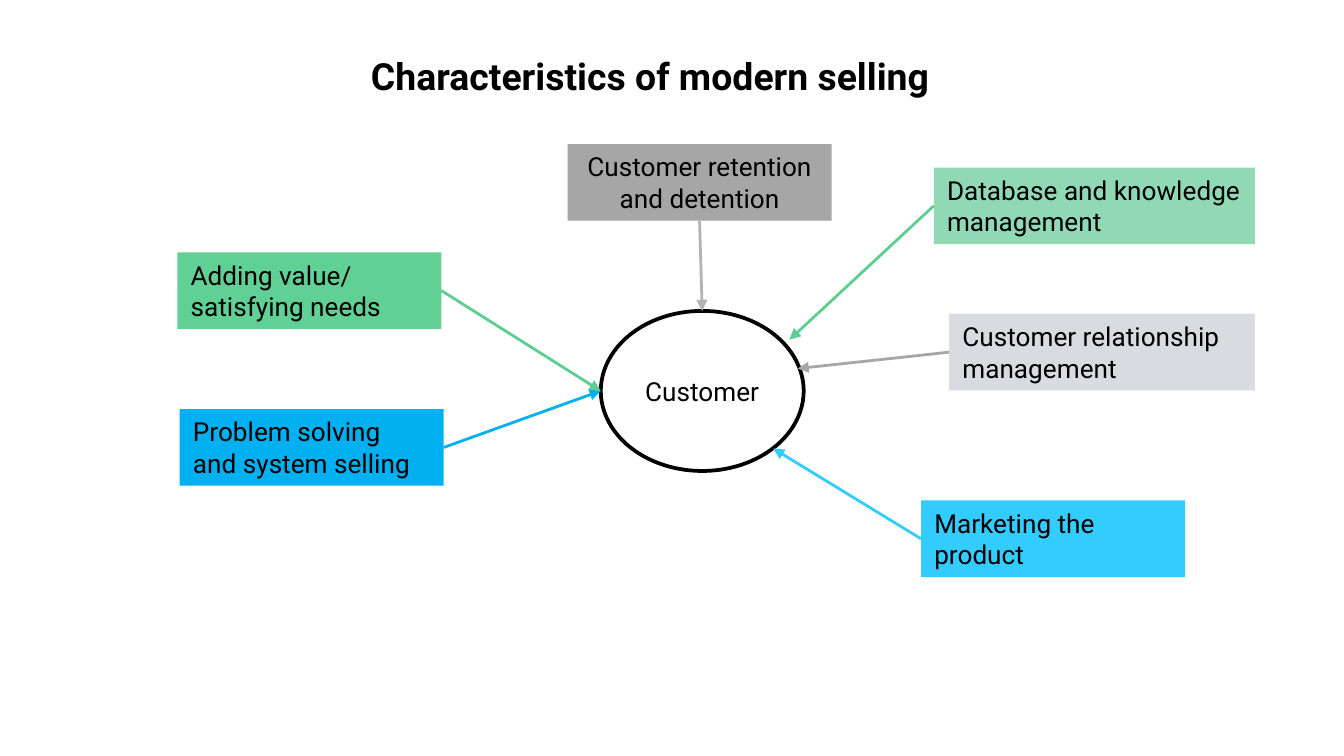
import pptx
import pptx.util
import pptx.dml.color
import pptx.enum.shapes
import pptx.enum.text
import pptx.oxml.ns
from lxml import etree

SHAPES = pptx.enum.shapes.MSO_SHAPE
ALIGN = pptx.enum.text.PP_ALIGN
ANCHOR = pptx.enum.text.MSO_ANCHOR
FONT = "Roboto"

WIDTH = pptx.util.Inches(10)
HEIGHT = WIDTH * 9 // 16
TITLE = ("Characteristics of modern selling", (26.6, 6.15, 46.9, 7.83))
HUB = ("Customer", (44.7, 41.13, 15.1, 21.17))
BOX_HEIGHT = 10.14

TRAITS = [
    dict(text="Customer retention and detention", left=42.23, top=19.06, width=19.65,
         fill="A6A6A6", arrow="B3B3B3", side="bottom", tip=(0.5, 0), align=ALIGN.CENTER),
    dict(text="Database and knowledge management", left=69.48, top=22.16, width=23.9,
         fill="91D9B5", arrow="5CCE92", side="left", tip=(0.93, 0.18)),
    dict(text="Marketing the product", left=68.53, top=66.2, width=19.65,
         fill="33CCFF", arrow="33CCFF", side="left", tip=(0.85, 0.86)),
    dict(text="Customer relationship management", left=70.62, top=41.52, width=22.75,
         fill="DADBE1", arrow="A6A6A6", side="left", tip=(0.97, 0.36)),
    dict(text="Adding value/ satisfying needs", left=13.2, top=33.38, width=19.65,
         fill="61D095", arrow="5CCE92", side="right", tip=(0, 0.5)),
    dict(text="Problem solving and system selling", left=13.37, top=54.12, width=19.65,
         fill="00B0F0", arrow="00B0F0", side="right", tip=(0, 0.5)),
]
SIDES = {"left": (0, 0.5), "right": (1, 0.5), "bottom": (0.5, 1)}


def colour(value):
    return pptx.dml.color.RGBColor.from_string(value)


def place(left, top, width, height):
    return [int(share * size / 100) for share, size in
            zip((left, top, width, height), (WIDTH, HEIGHT, WIDTH, HEIGHT))]


def point_on(shape, across, down):
    return int(shape.left + across * shape.width), int(shape.top + down * shape.height)


def write(shape, text, size=14, bold=False, align=ALIGN.LEFT, anchor=ANCHOR.TOP):
    frame = shape.text_frame
    frame.word_wrap = True
    frame.auto_size = pptx.enum.text.MSO_AUTO_SIZE.NONE
    frame.vertical_anchor = anchor
    para = frame.paragraphs[0]
    para.alignment = align
    span = para.add_run()
    span.text = text
    span.font.name = FONT
    span.font.size = pptx.util.Pt(size)
    span.font.bold = bold
    span.font.color.rgb = colour("000000")


def add_box(page, kind, area, fill, outline=None):
    box = page.shapes.add_shape(kind, *place(*area))
    box.shadow.inherit = False
    box.fill.solid()
    box.fill.fore_color.rgb = colour(fill)
    if outline:
        box.line.color.rgb = colour(outline)
        box.line.width = pptx.util.Pt(2)
    else:
        box.line.fill.background()
    return box


def add_arrow(page, start, end, line_colour):
    arrow = page.shapes.add_connector(
        pptx.enum.shapes.MSO_CONNECTOR.STRAIGHT, *start, *end)
    arrow.line.color.rgb = colour(line_colour)
    arrow.line.width = pptx.util.Pt(1.5)
    name = pptx.oxml.ns.qn
    properties = arrow._element.spPr
    etree.SubElement(properties.find(name("a:ln")), name("a:tailEnd"), type="triangle")
    etree.SubElement(properties, name("a:effectLst"))


def main():
    deck = pptx.Presentation()
    deck.slide_width, deck.slide_height = WIDTH, HEIGHT
    page = deck.slides.add_slide(deck.slide_layouts[5])

    title_text, title_area = TITLE
    title = page.shapes.title
    title.left, title.top, title.width, title.height = place(*title_area)
    write(title, title_text, size=20, bold=True)

    hub_text, hub_area = HUB
    hub = add_box(page, SHAPES.OVAL, hub_area, "FFFFFF", outline="000000")
    write(hub, hub_text, align=ALIGN.CENTER, anchor=ANCHOR.MIDDLE)

    boxes = []
    for trait in TRAITS:
        area = (trait["left"], trait["top"], trait["width"], BOX_HEIGHT)
        box = add_box(page, SHAPES.RECTANGLE, area, trait["fill"])
        write(box, trait["text"], align=trait.get("align", ALIGN.LEFT))
        boxes.append(box)

    for trait, box in zip(TRAITS, boxes):
        add_arrow(page, point_on(box, *SIDES[trait["side"]]),
                  point_on(hub, *trait["tip"]), trait["arrow"])

    deck.save("out.pptx")


if __name__ == "__main__":
    main()
